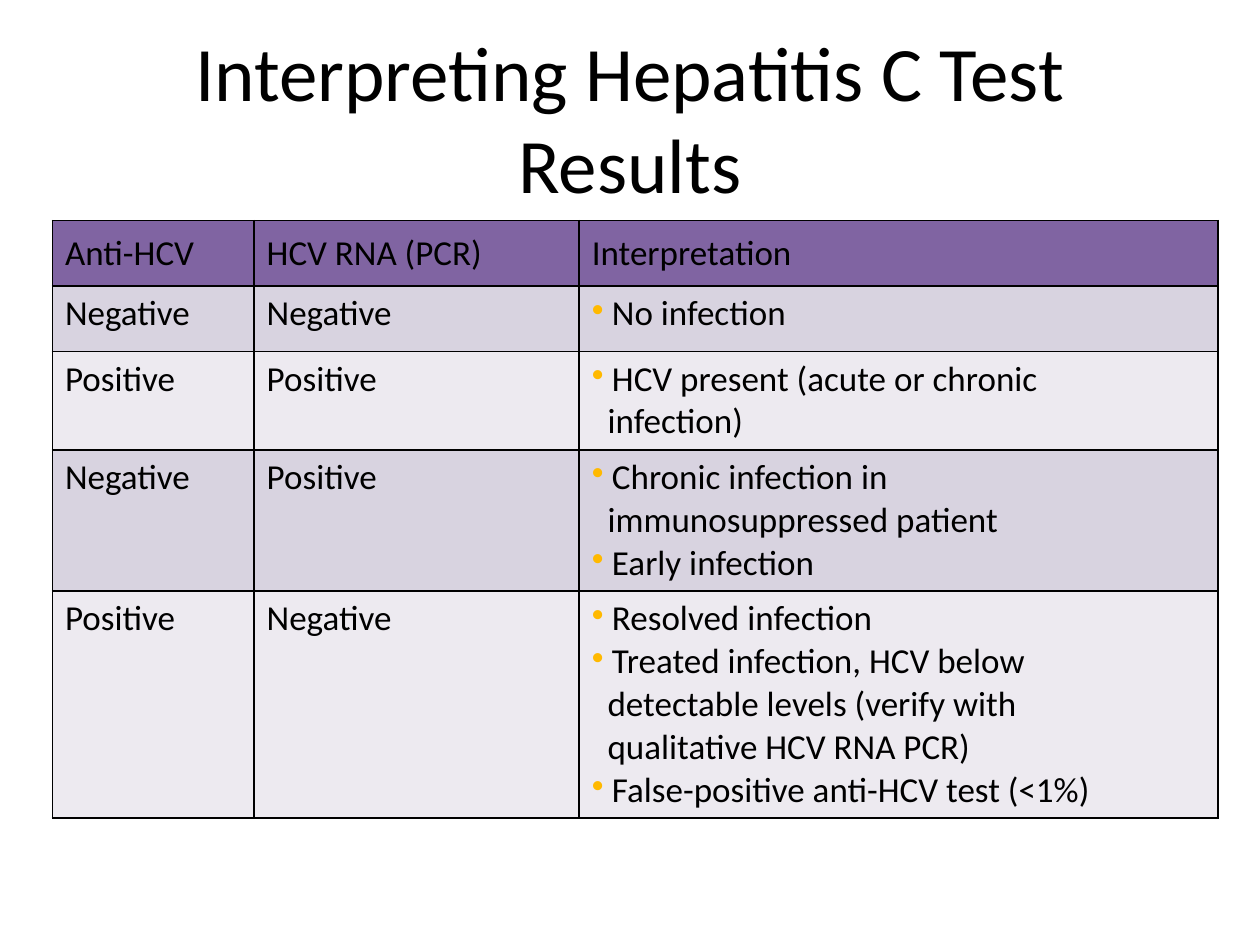
from dataclasses import dataclass

from lxml import etree
from pptx import Presentation
from pptx.dml.color import RGBColor
from pptx.enum import text as t
from pptx.oxml import ns
from pptx.util import Pt

COLORS = {
    "ink": "000000",
    "header": "8064A2",
    "dark_band": "D8D3E0",
    "light_band": "EDEAF0",
    "bullet": "FFB900",
}
FONT = "Calibri"
COLUMN_WIDTHS = (115.2, 185.8, 365)
HEADER_HEIGHT = 37.4
HEADINGS = ("Anti-HCV", "HCV RNA (PCR)", "Interpretation")
BULLET_INDENT = 11.5
CONTINUATION_INDENT = 9


@dataclass(frozen=True)
class TestResult:
    """One row; each interpretation is a tuple of lines, the first one bulleted."""
    anti_hcv: str
    hcv_rna: str
    interpretations: tuple[tuple[str, ...], ...]
    height: float


RESULTS = (
    TestResult("Negative", "Negative", (("No infection",),), 37.4),
    TestResult("Positive", "Positive",
               (("HCV present (acute or chronic", "infection)"),), 56.3),
    TestResult("Negative", "Positive",
               (("Chronic infection in", "immunosuppressed patient"),
                ("Early infection",)), 80.6),
    TestResult("Positive", "Negative",
               (("Resolved infection",),
                ("Treated infection, HCV below", "detectable levels (verify with",
                 "qualitative HCV RNA PCR)"),
                ("False-positive anti-HCV test (<1%)",)), 129.6),
)


def add_run(paragraph, wording: str, size: float) -> None:
    run = paragraph.add_run()
    run.text = wording
    run.font.name = FONT
    run.font.size = Pt(size)
    run.font.color.rgb = RGBColor.from_string(COLORS["ink"])


def add_color(parent, color: str) -> None:
    etree.SubElement(parent, ns.qn("a:srgbClr"), val=COLORS[color])


def indent(paragraph, left: float, bulleted: bool) -> None:
    properties = paragraph._p.get_or_add_pPr()
    properties.set("marL", str(Pt(left)))
    properties.set("indent", str(Pt(-left if bulleted else 0)))
    if bulleted:
        add_color(etree.SubElement(properties, ns.qn("a:buClr")), "bullet")
        etree.SubElement(properties, ns.qn("a:buChar"), char="•")


def style_cell(cell, fill: str) -> None:
    """Fill the cell and rule all four of its edges."""
    cell.fill.solid()
    cell.fill.fore_color.rgb = RGBColor.from_string(COLORS[fill])
    properties = cell._tc.get_or_add_tcPr()
    for position, edge in enumerate(("lnL", "lnR", "lnT", "lnB")):
        border = etree.Element(ns.qn(f"a:{edge}"), w=str(Pt(1)))
        add_color(etree.SubElement(border, ns.qn("a:solidFill")), "ink")
        properties.insert(position, border)


def add_interpretations(cell, interpretations: tuple[tuple[str, ...], ...]) -> None:
    frame = cell.text_frame
    lines = [(line, number == 0) for item in interpretations
             for number, line in enumerate(item)]
    for position, (line, bulleted) in enumerate(lines):
        paragraph = frame.add_paragraph() if position else frame.paragraphs[0]
        indent(paragraph, BULLET_INDENT if bulleted else CONTINUATION_INDENT, bulleted)
        add_run(paragraph, line, 20)


def add_title(slide, wording: str) -> None:
    frame = slide.shapes.add_textbox(Pt(36), Pt(21.6), Pt(648), Pt(90)).text_frame
    frame.word_wrap = True
    frame.vertical_anchor = t.MSO_ANCHOR.MIDDLE
    frame.paragraphs[0].alignment = t.PP_ALIGN.CENTER
    add_run(frame.paragraphs[0], wording, 44)


def add_results_table(slide) -> None:
    heights = (HEADER_HEIGHT, *(result.height for result in RESULTS))
    table = slide.shapes.add_table(
        len(heights), len(COLUMN_WIDTHS), Pt(30), Pt(126),
        Pt(sum(COLUMN_WIDTHS)), Pt(sum(heights))).table
    table.first_row = table.horz_banding = False
    for column, width in zip(table.columns, COLUMN_WIDTHS):
        column.width = Pt(width)
    for row, height in zip(table.rows, heights):
        row.height = Pt(height)

    for column, heading in enumerate(HEADINGS):
        cell = table.cell(0, column)
        style_cell(cell, "header")
        cell.vertical_anchor = t.MSO_ANCHOR.MIDDLE
        add_run(cell.text_frame.paragraphs[0], heading, 20)

    for row, result in enumerate(RESULTS, start=1):
        for cell in table.rows[row].cells:
            style_cell(cell, "dark_band" if row % 2 else "light_band")
        for column, finding in enumerate((result.anti_hcv, result.hcv_rna)):
            add_run(table.cell(row, column).text_frame.paragraphs[0], finding, 20)
        add_interpretations(table.cell(row, 2), result.interpretations)


def main() -> None:
    deck = Presentation()
    deck.slide_width, deck.slide_height = Pt(720), Pt(540)
    slide = deck.slides.add_slide(deck.slide_layouts[6])
    add_results_table(slide)
    add_title(slide, "Interpreting Hepatitis C Test Results")
    deck.save("out.pptx")


if __name__ == "__main__":
    main()
